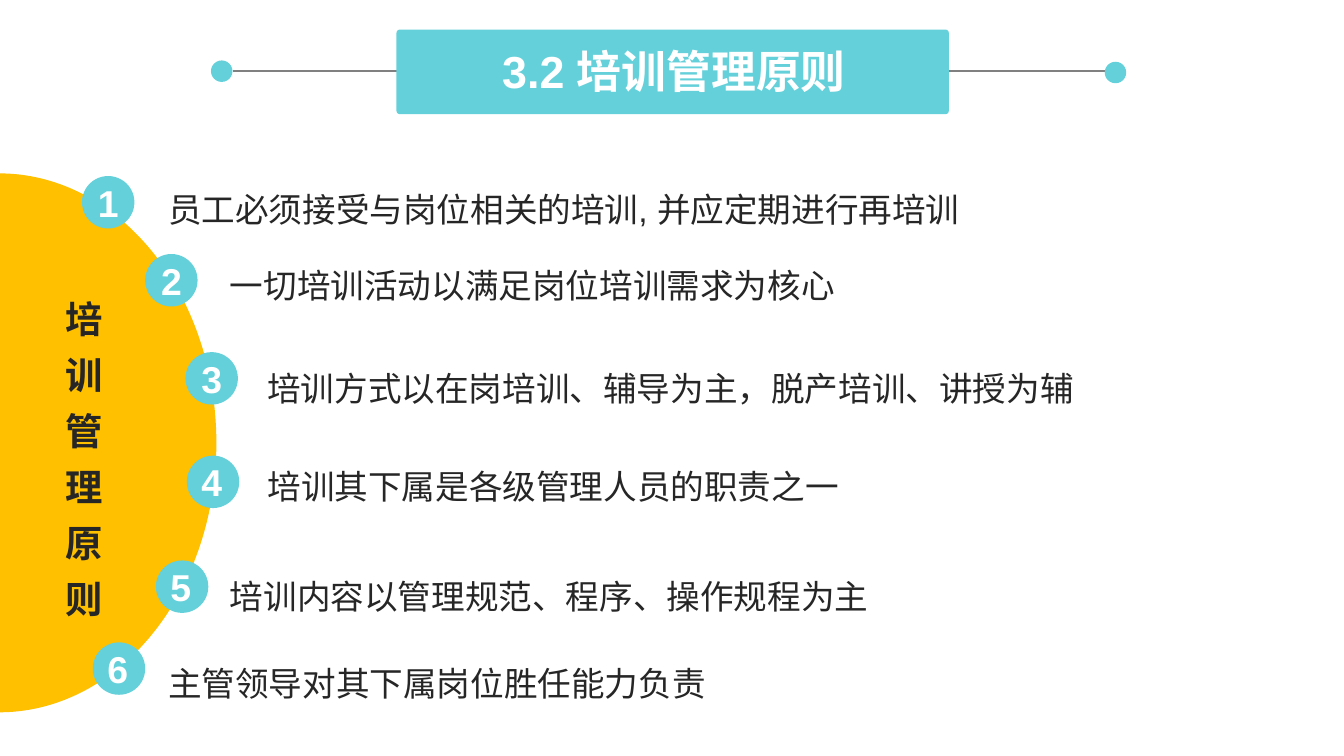
import pptx
import pptx.dml.color
import pptx.enum.shapes
import pptx.enum.text
import pptx.oxml.ns
import pptx.util
from lxml import etree

PX = 9144  # EMU, 100 px to the inch
TEAL, AMBER, GRAY, INK, WHITE = "64D0DA", "FFC000", "808080", "262626", "FFFFFF"
SHAPES = pptx.enum.shapes.MSO_SHAPE
CENTER = pptx.enum.text.PP_ALIGN.CENTER

HEADING = {"size": pptx.util.Pt(24), "bold": True}
LABEL = {"size": pptx.util.Pt(20), "bold": True}
BODY = {"size": pptx.util.Pt(18), "bold": False}
LOOSE = {"line_spacing": 1.25}
BODY_MARGINS = {"margin_left": 11 * PX, "margin_right": 11 * PX,
                "margin_top": 6 * PX, "margin_bottom": 6 * PX}

BADGE = 39
# badge left, top; number left; sentence left, top, width, height; sentence
PRINCIPLES = [
    ((61, 131), 63, (114, 127, 692, 49), "员工必须接受与岗位相关的培训, 并应定期进行再培训"),
    ((108, 189), 110, (160, 184, 565, 46), "一切培训活动以满足岗位培训需求为核心"),
    ((138, 262), 140, (188, 260, 724, 46), "培训方式以在岗培训、辅导为主，脱产培训、讲授为辅"),
    ((139, 339), 140, (188, 333, 591, 46), "培训其下属是各级管理人员的职责之一"),
    ((116, 417), 117, (160, 415, 632, 46), "培训内容以管理规范、程序、操作规程为主"),
    ((69, 478), 70, (114, 480, 515, 46), "主管领导对其下属岗位胜任能力负责"),
]


def px(*lengths):
    return [length * PX for length in lengths]


def rgb(color):
    return pptx.dml.color.RGBColor.from_string(color)


def apply(target, formats):
    for name, value in formats.items():
        setattr(target, name, value)


def add_filled(slide, kind, box, color, adjustments=()):
    shape = slide.shapes.add_shape(kind, *px(*box))
    shape.shadow.inherit = False
    shape.fill.solid()
    shape.fill.fore_color.rgb = rgb(color)
    shape.line.fill.background()
    for index, value in enumerate(adjustments):
        shape.adjustments[index] = value
    return shape


def add_rule(slide, start, end):
    rule = slide.shapes.add_connector(
        pptx.enum.shapes.MSO_CONNECTOR.STRAIGHT, *px(*start, *end))
    rule.line.color.rgb = rgb(GRAY)
    rule.line.width = pptx.util.Pt(1)
    etree.SubElement(rule._element.spPr, pptx.oxml.ns.qn("a:effectLst"))


def add_text(slide, box, lines, color, font, paragraph_format=None, margins=None):
    """Add a text box with one paragraph for each of the lines."""
    frame = slide.shapes.add_textbox(*px(*box)).text_frame
    frame.word_wrap = True
    frame.auto_size = pptx.enum.text.MSO_AUTO_SIZE.SHAPE_TO_FIT_TEXT
    apply(frame, margins or {})
    for index, line in enumerate(lines):
        paragraph = frame.add_paragraph() if index else frame.paragraphs[0]
        apply(paragraph, paragraph_format or {})
        run = paragraph.add_run()
        run.text = line
        apply(run.font, {"name": "Arial", **font})
        run.font.color.rgb = rgb(color)


def add_banner(slide):
    add_rule(slide, (173, 53), (825, 53))
    add_filled(slide, SHAPES.ROUNDED_RECTANGLE, (295, 22, 411, 63), TEAL, [0.04])
    add_text(slide, (310, 28, 383, 50), ["3.2 培训管理原则"], WHITE, HEADING,
             {"alignment": CENTER})
    for left, top in ((157, 45), (822, 46)):
        add_filled(slide, SHAPES.OVAL, (left, top, 16, 16), TEAL)


def add_half_disc(slide):
    # Adjustments are angles in units of 100000/60000 degree: 0 to 180 degrees
    disc = add_filled(slide, SHAPES.PIE, (-201, 168, 401, 323), AMBER, [0, 108])
    disc.rotation = 270
    add_text(slide, (8, 207, 110, 263), "培训管理原则", INK, LABEL,
             {"alignment": CENTER, **LOOSE})


def add_badge(slide, left, top, number_left, number):
    add_filled(slide, SHAPES.OVAL, (left, top, BADGE, BADGE), TEAL)
    add_text(slide, (number_left, top - 2, 34, 44), [str(number)], WHITE, LABEL)


def main():
    deck = pptx.Presentation()
    deck.slide_width = 1000 * PX
    deck.slide_height = deck.slide_width * 9 // 16
    slide = deck.slides.add_slide(deck.slide_layouts[6])
    add_banner(slide)
    for _, _, box, sentence in PRINCIPLES:
        add_text(slide, box, [sentence], INK, BODY, LOOSE, BODY_MARGINS)
    add_half_disc(slide)
    for number, (corner, number_left, _, _) in enumerate(PRINCIPLES, start=1):
        add_badge(slide, *corner, number_left, number)
    deck.save("out.pptx")


if __name__ == "__main__":
    main()
